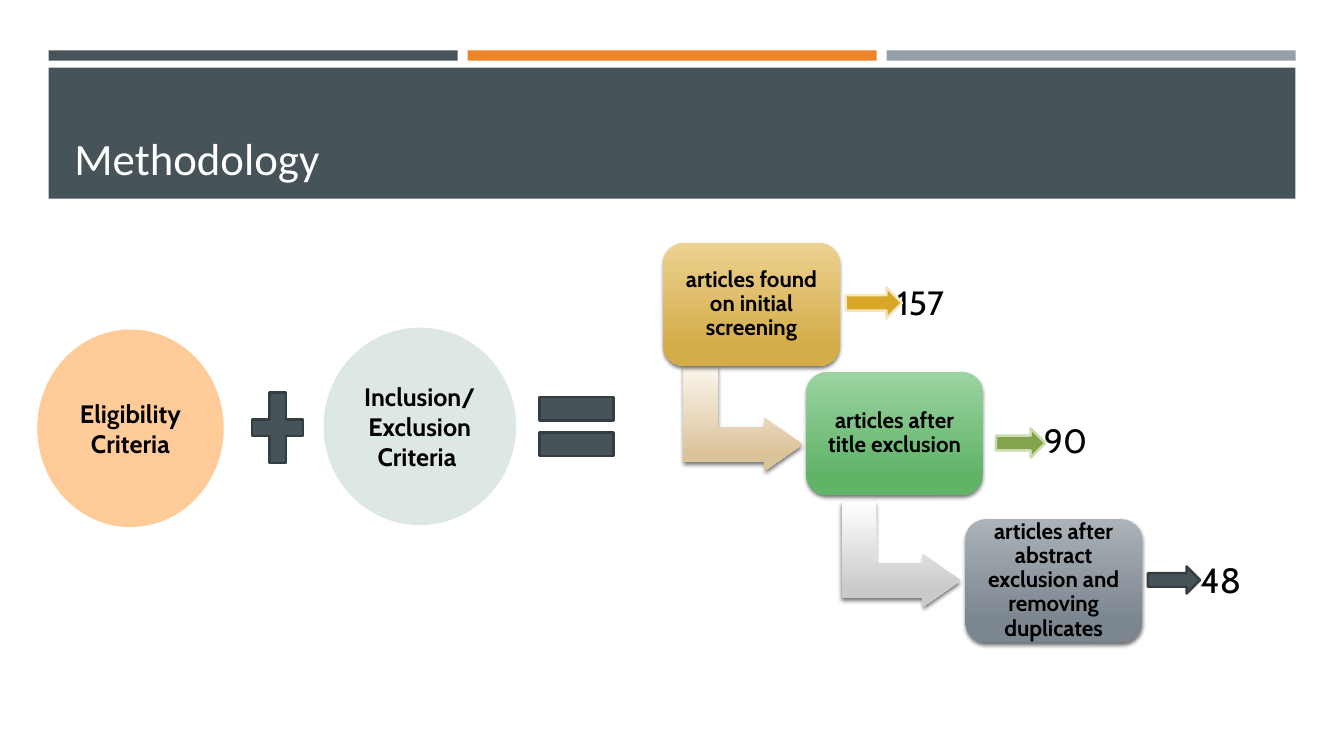
from collections import namedtuple
from dataclasses import dataclass

from lxml import etree
from pptx import Presentation
from pptx.dml.color import RGBColor
from pptx.enum.shapes import MSO_SHAPE
from pptx.enum.text import MSO_ANCHOR, PP_ALIGN
from pptx.oxml.ns import qn
from pptx.util import Pt

RECT, ROUNDED, OVAL = MSO_SHAPE.RECTANGLE, MSO_SHAPE.ROUNDED_RECTANGLE, MSO_SHAPE.OVAL
PLUS, EQUALS = MSO_SHAPE.MATH_PLUS, MSO_SHAPE.MATH_EQUAL
ARROW, BENT_ARROW = MSO_SHAPE.RIGHT_ARROW, MSO_SHAPE.BENT_UP_ARROW
MIDDLE, BOTTOM = MSO_ANCHOR.MIDDLE, MSO_ANCHOR.BOTTOM
LEFT, CENTER = PP_ALIGN.LEFT, PP_ALIGN.CENTER


@dataclass(frozen=True)
class Theme:
    heading_font: str = "Calibri"
    body_font: str = "Cabin"
    title_size: float = 32
    circle_size: float = 18
    step_size: float = 16
    slate: str = "465359"
    slate_edge: str = "343D42"
    orange: str = "ED8428"
    grey: str = "969FA7"
    peach: str = "FFCC99"
    mint: str = "DDE7E3"
    white: str = "FFFFFF"
    black: str = "000000"


THEME = Theme()
Box = namedtuple("Box", "left top width height")
# Boxes of count, arrow and bend are offsets from the step's own corner.
Step = namedtuple("Step", "box label shades count count_box indent count_size "
                          "arrow arrow_fill arrow_edge bend bend_shades")

STEPS = [
    Step(Box(473.8, 173.5, 126, 87.8), "articles found on initial screening",
         ("ECD190", "D4AD49"), "157", Box(126, 8.6, 91.4, 71.3), 41, 24,
         Box(130.3, 31.7, 40.3, 22.3), "D9A725", "F5E7C5",
         Box(19.4, 82.8, 74.9, 85), ("FBF6EE", "DBC49A")),
    Step(Box(576, 265.7, 126, 87.8), "articles after title exclusion",
         ("9BD4A1", "61B368"), "90", Box(128.2, 15.1, 91.4, 71.3), 41.5, 24,
         Box(135.4, 40.3, 35.3, 20.9), "84A44B", "CBDBB0",
         Box(30.2, 87.8, 74.9, 85), ("FFFFFF", "C8CACB")),
    Step(Box(689.6, 370.8, 126, 87.8),
         "articles after abstract exclusion and removing duplicates",
         ("ABB2B8", "7C868F"), "48", Box(118.8, 9.4, 91.4, 71.3), 49, 25,
         Box(130.3, 33.8, 37.4, 19.4), THEME.slate, THEME.slate_edge, None, None),
]


def inside(outer, part):
    return Box(outer.left + part.left, outer.top + part.top, part.width, part.height)


def add_flat(page, kind, box, fill=None, edge=None):
    """Add a preset shape without shadow; no edge colour means no outline."""
    shape = page.shapes.add_shape(kind, *map(Pt, box))
    shape.shadow.inherit = False
    if fill:
        shape.fill.solid()
        shape.fill.fore_color.rgb = RGBColor.from_string(fill)
    if edge:
        shape.line.color.rgb = RGBColor.from_string(edge)
        shape.line.width = Pt(1.75)
    else:
        shape.line.fill.background()
    return shape


def add_raised(page, kind, box, shades):
    """Add a shape with a top-to-bottom gradient and a soft shadow below it."""
    shape = add_flat(page, kind, box)
    shape.fill.gradient()
    shape.fill.gradient_angle = 270
    for stop, shade, position in zip(shape.fill.gradient_stops, shades, (0, 0.84)):
        stop.color.rgb = RGBColor.from_string(shade)
        stop.position = position
    properties = shape._element.spPr
    properties.find(qn("a:gradFill")).set("rotWithShape", "0")
    shadow = etree.SubElement(properties.find(qn("a:effectLst")), qn("a:outerShdw"),
                              blurRad=str(Pt(3)), dist=str(Pt(2)), dir="5400000",
                              algn="ctr", rotWithShape="0")
    color = etree.SubElement(shadow, qn("a:srgbClr"), val=THEME.black)
    etree.SubElement(color, qn("a:alpha"), val="55000")
    return shape


def write(shape, lines, size, color=THEME.black, font=THEME.body_font, bold=False,
          align=CENTER, anchor=MIDDLE, insets=(7.2, 3.6, 7.2, 3.6), spacing=1.0):
    frame = shape.text_frame
    frame.word_wrap = True
    frame.vertical_anchor = anchor
    (frame.margin_left, frame.margin_top,
     frame.margin_right, frame.margin_bottom) = map(Pt, insets)
    for number, line in enumerate(lines):
        para = frame.add_paragraph() if number else frame.paragraphs[0]
        para.alignment = align
        para.line_spacing = spacing
        span = para.add_run()
        span.text = line
        span.font.name = font
        span.font.size = Pt(size)
        span.font.bold = bold
        span.font.color.rgb = RGBColor.from_string(color)


def add_header(page, box):
    gap = 7.2
    width = (box.width - 2 * gap) / 3
    for column, fill in enumerate((THEME.slate, THEME.orange, THEME.grey)):
        add_flat(page, RECT, Box(box.left + column * (width + gap), box.top, width, 7.4), fill)
    add_flat(page, RECT, inside(box, Box(0, 12.4, box.width, 93.6)), THEME.slate)
    title = page.shapes.add_textbox(*map(Pt, inside(box, Box(11.3, 19.4, 868.3, 79.9))))
    write(title, ["Methodology"], THEME.title_size, THEME.white, THEME.heading_font,
          align=LEFT, anchor=BOTTOM)


def add_criteria(page, box):
    """Two criteria circles joined by a plus and followed by an equals sign."""
    circles = [
        (Box(0, 1.4, 133.2, 141.1), THEME.peach, ["Eligibility Criteria"]),
        (Box(204.5, 0, 137.5, 141.1), THEME.mint, ["Inclusion/Exclusion", "Criteria "]),
    ]
    for place, fill, lines in circles:
        circle = add_flat(page, OVAL, inside(box, place), fill)
        write(circle, lines, THEME.circle_size, bold=True)
    for kind, place in ((PLUS, Box(146.9, 37.4, 49.7, 68.4)),
                        (EQUALS, Box(349.2, 34.6, 72, 72))):
        add_flat(page, kind, inside(box, place), THEME.slate, THEME.slate_edge)


def add_step(page, step):
    if step.bend:
        bend = add_raised(page, BENT_ARROW, inside(step.box, step.bend), step.bend_shades)
        bend.rotation = 90
        for index, value in enumerate((0.33, 0.25, 0.36)):
            bend.adjustments[index] = value
    card = add_raised(page, ROUNDED, step.box, step.shades)
    write(card, [step.label], THEME.step_size, bold=True, insets=(5, 5, 5, 5), spacing=0.9)
    count = page.shapes.add_textbox(*map(Pt, inside(step.box, step.count_box)))
    write(count, [step.count], step.count_size, align=LEFT,
          insets=(step.indent, 7, 0, 7), spacing=0.9)
    add_flat(page, ARROW, inside(step.box, step.arrow), step.arrow_fill, step.arrow_edge)


def main():
    deck = Presentation()
    deck.slide_width, deck.slide_height = Pt(960), Pt(540)
    page = deck.slides.add_slide(deck.slide_layouts[6])
    add_header(page, Box(34.8, 36, 890.6, 106))
    add_criteria(page, Box(26.6, 234, 421.2, 142.5))
    for step in STEPS:
        add_step(page, step)
    deck.save("out.pptx")


if __name__ == "__main__":
    main()
